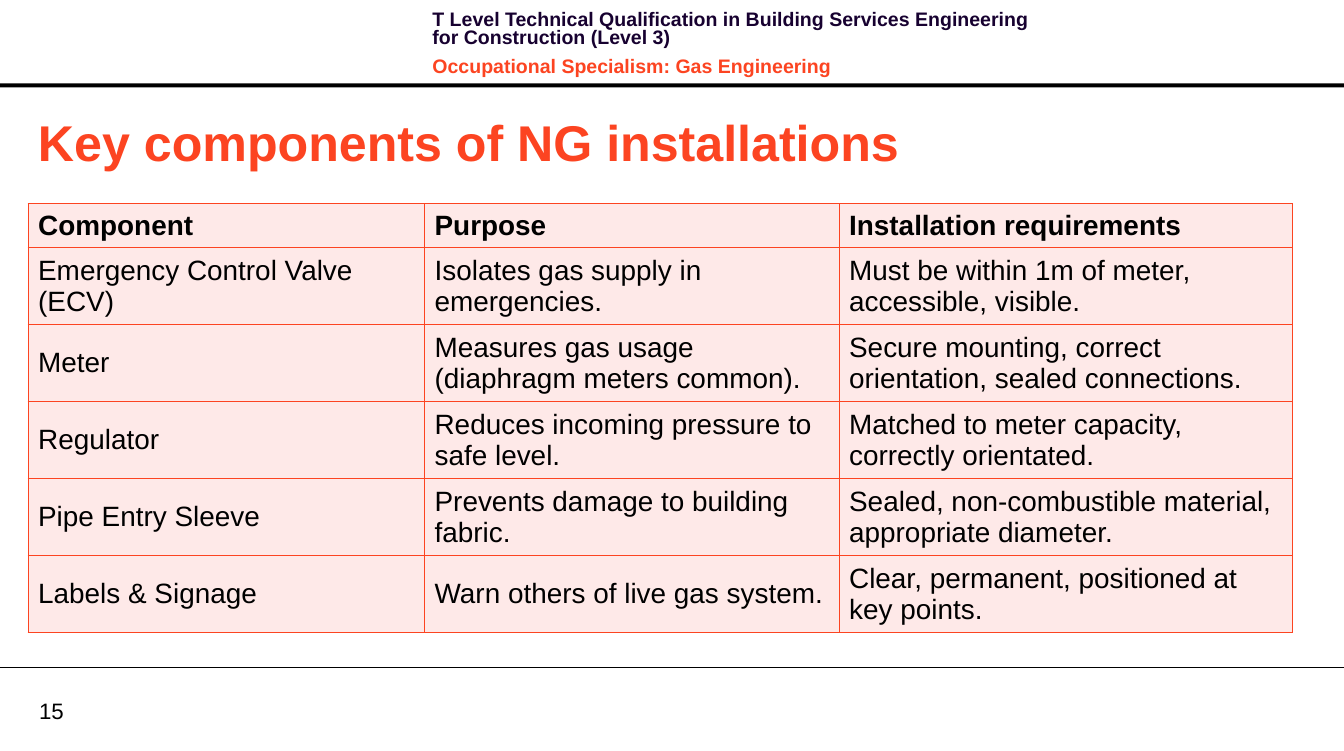
from lxml import etree
from pptx import Presentation
from pptx.dml.color import RGBColor
from pptx.enum.shapes import MSO_CONNECTOR, MSO_SHAPE
from pptx.enum.text import MSO_ANCHOR
from pptx.oxml.ns import qn
from pptx.util import Inches, Pt

STRAIGHT = MSO_CONNECTOR.STRAIGHT
RECTANGLE = MSO_SHAPE.RECTANGLE
TOP, MIDDLE = MSO_ANCHOR.TOP, MSO_ANCHOR.MIDDLE

# Content
COURSE = "T Level Technical Qualification in Building Services Engineering for Construction (Level 3)"
SPECIALISM = "Occupational Specialism: Gas Engineering"
TITLE = "Key components of NG installations"
PAGE_NUMBER = "15"
COMPONENTS = [
    ("Component", "Purpose", "Installation requirements"),
    ("Emergency Control Valve (ECV)", "Isolates gas supply in emergencies.",
     "Must be within 1m of meter, accessible, visible."),
    ("Meter", "Measures gas usage (diaphragm meters common).",
     "Secure mounting, correct orientation, sealed connections."),
    ("Regulator", "Reduces incoming pressure to safe level.",
     "Matched to meter capacity, correctly orientated."),
    ("Pipe Entry Sleeve", "Prevents damage to building fabric.",
     "Sealed, non-combustible material, appropriate diameter."),
    ("Labels & Signage", "Warn others of live gas system.",
     "Clear, permanent, positioned at key points."),
]

# Theme and layout
THEME = {
    "font": "Arial", "black": "000000", "accent": "FC4421", "navy": "170130", "cell": "FEE9E8",
    "title": 36, "table": 20, "number": 16, "header": 14,
}
PAGE_WIDTH, PAGE_HEIGHT = 13.39, 7.48
COLUMN_WIDTHS = (3.95, 4.13, 4.52)
HEADING_HEIGHT, ROW_HEIGHT = 0.41, 0.72
TABLE_LEFT, TABLE_TOP = 0.28, 2.03
FOOTER_TOP = 6.65


def color(name):
    return RGBColor.from_string(THEME[name])


def write(para, text, size, ink, bold=False, **spacing):
    span = para.add_run()
    span.text = text
    span.font.color.rgb = color(ink)
    formats = {"name": THEME["font"], "size": Pt(THEME[size]), "bold": bold}
    for target, values in ((span.font, formats), (para, spacing)):
        for key, value in values.items():
            setattr(target, key, value)


def add_box(page, left, top, width, height, **formats):
    box = page.shapes.add_textbox(Inches(left), Inches(top), Inches(width), Inches(height))
    frame = box.text_frame
    for key, value in {"word_wrap": True, **formats}.items():
        setattr(frame, key, value)
    return frame


def outline_cell(cell):
    properties = cell._tc.get_or_add_tcPr()
    for index, side in enumerate(("lnL", "lnR", "lnT", "lnB")):
        border = etree.Element(qn(f"a:{side}"), w=str(Pt(1)))
        fill = etree.SubElement(border, qn("a:solidFill"))
        etree.SubElement(fill, qn("a:srgbClr"), val=THEME["accent"])
        properties.insert(index, border)


def add_header(page):
    bar = page.shapes.add_shape(RECTANGLE, 0, Inches(0.83), Inches(PAGE_WIDTH), Inches(0.04))
    bar.shadow.inherit = False
    bar.fill.solid()
    bar.fill.fore_color.rgb = color("black")
    bar.line.fill.background()

    frame = add_box(page, 4.21, 0.07, 6.37, 0.64, vertical_anchor=TOP)
    spacing = {"line_spacing": Pt(13.1), "space_after": Pt(4)}
    write(frame.paragraphs[0], COURSE, "header", "navy", True, **spacing)
    write(frame.add_paragraph(), SPECIALISM, "header", "accent", True,
          space_before=Pt(4), **spacing)


def add_components(page):
    heights = [HEADING_HEIGHT] + [ROW_HEIGHT] * (len(COMPONENTS) - 1)
    table = page.shapes.add_table(
        len(COMPONENTS), len(COLUMN_WIDTHS), Inches(TABLE_LEFT), Inches(TABLE_TOP),
        Inches(sum(COLUMN_WIDTHS)), Inches(sum(heights))).table
    table.horz_banding = False
    for column, width in zip(table.columns, COLUMN_WIDTHS):
        column.width = Inches(width)
    for row_index, (row, height) in enumerate(zip(table.rows, heights)):
        row.height = Inches(height)
        for cell, text in zip(row.cells, COMPONENTS[row_index]):
            cell.vertical_anchor = MIDDLE
            cell.fill.solid()
            cell.fill.fore_color.rgb = color("cell")
            outline_cell(cell)
            write(cell.text_frame.paragraphs[0], text, "table", "black", row_index == 0)


def add_footer(page):
    rule = page.shapes.add_connector(
        STRAIGHT, 0, Inches(FOOTER_TOP), Inches(PAGE_WIDTH), Inches(FOOTER_TOP))
    rule.line.color.rgb = color("black")
    rule.line.width = Pt(0.75)
    etree.SubElement(rule._element.spPr, qn("a:effectLst"))

    margins = {f"margin_{side}": 0 for side in ("left", "top", "right", "bottom")}
    frame = add_box(page, 0.39, 6.94, 0.64, 0.27, vertical_anchor=MIDDLE, **margins)
    write(frame.paragraphs[0], PAGE_NUMBER, "number", "black")


def main():
    deck = Presentation()
    deck.slide_width, deck.slide_height = Inches(PAGE_WIDTH), Inches(PAGE_HEIGHT)
    page = deck.slides.add_slide(deck.slide_layouts[6])
    add_header(page)
    add_footer(page)
    title = add_box(page, 0.28, 1.05, 12.72, 0.71, vertical_anchor=MIDDLE)
    write(title.paragraphs[0], TITLE, "title", "accent", True)
    add_components(page)
    deck.save("out.pptx")


if __name__ == "__main__":
    main()
